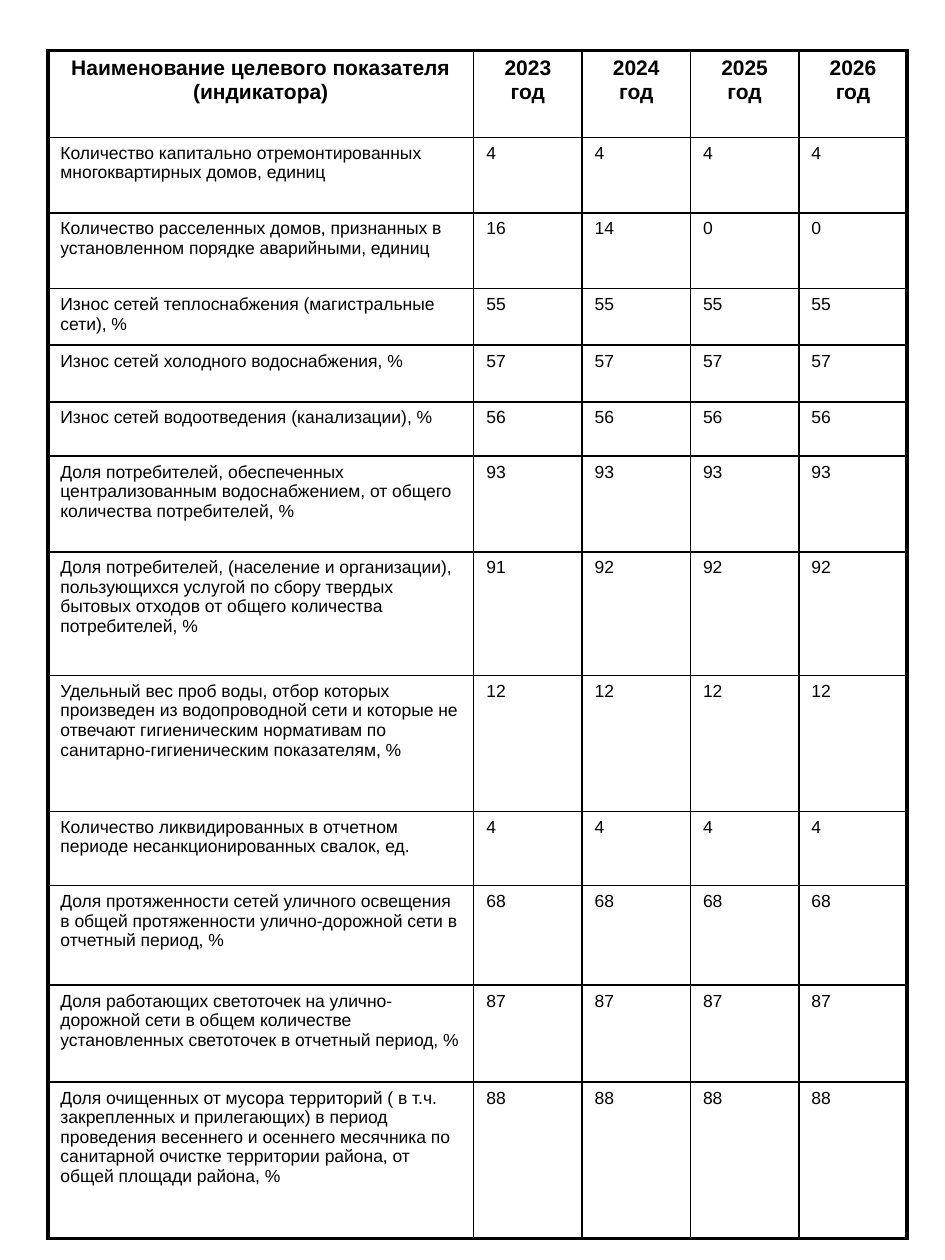
"""Build a one-slide table of municipal target indicators for 2023–2026."""
from lxml.etree import SubElement
from pptx import Presentation
from pptx.dml.color import RGBColor
from pptx.enum.text import PP_ALIGN
from pptx.oxml.ns import qn
from pptx.util import Inches, Pt


def color(value):
    return RGBColor.from_string(value)


def add_border(cell, side, width):
    line = SubElement(cell._tc.get_or_add_tcPr(), qn(f"a:ln{side}"), w=str(Pt(width)))
    fill = SubElement(line, qn("a:solidFill"))
    SubElement(fill, qn("a:srgbClr"), val=BLACK)


BLACK = "000000"
INNER_WIDTH, OUTER_WIDTH = 1, 2.25
HEADER_FORMAT = {"name": "Arial", "size": Pt(12), "bold": True}
BODY_FORMAT = {"name": "Arial", "size": Pt(10), "bold": False}
MARGINS = {
    "margin_left": Inches(0.1),
    "margin_top": Inches(0.05),
    "margin_right": Inches(0.1),
    "margin_bottom": Inches(0.05),
}

header = ["Наименование целевого показателя (индикатора)"]
header += [f"{year} год" for year in range(2023, 2027)]
indicators = [
    (0.6, "Количество капитально отремонтированных многоквартирных домов, единиц", [4, 4, 4, 4]),
    (0.6, "Количество расселенных домов, признанных в установленном порядке аварийными, единиц",
     [16, 14, 0, 0]),
    (0.45, "Износ сетей теплоснабжения (магистральные сети), %", [55, 55, 55, 55]),
    (0.45, "Износ сетей холодного водоснабжения, %", [57, 57, 57, 57]),
    (0.43, "Износ сетей водоотведения (канализации), %", [56, 56, 56, 56]),
    (0.76, "Доля потребителей, обеспеченных централизованным водоснабжением, "
     "от общего количества потребителей, %", [93, 93, 93, 93]),
    (0.98, "Доля потребителей, (население и организации), пользующихся услугой по сбору "
     "твердых бытовых отходов от общего количества потребителей, %", [91, 92, 92, 92]),
    (1.08, "Удельный вес проб воды, отбор которых произведен из водопроводной сети и которые "
     "не отвечают гигиеническим нормативам по санитарно-гигиеническим показателям, %",
     [12, 12, 12, 12]),
    (0.59, "Количество ликвидированных в отчетном периоде несанкционированных свалок, ед.",
     [4, 4, 4, 4]),
    (0.79, "Доля протяженности сетей уличного освещения в общей протяженности "
     "улично-дорожной сети в отчетный период, %", [68, 68, 68, 68]),
    (0.77, "Доля работающих светоточек на улично-дорожной сети в общем количестве "
     "установленных светоточек в отчетный период, %", [87, 87, 87, 87]),
    (1.24, "Доля очищенных от мусора территорий ( в т.ч. закрепленных и прилегающих) в период "
     "проведения весеннего и осеннего месячника по санитарной очистке территории района, "
     "от общей площади района, %", [88, 88, 88, 88]),
]
rows = [(0.69, header)] + [(height, [name, *values]) for height, name, values in indicators]
column_widths = [3.38] + [0.86] * 4
last_row, last_column = len(rows) - 1, len(column_widths) - 1

presentation = Presentation()
presentation.slide_width = Inches(7.5)
presentation.slide_height = Inches(10)
slide = presentation.slides.add_slide(presentation.slide_layouts[6])

table = slide.shapes.add_table(
    len(rows), len(column_widths), Inches(0.38), Inches(0.4), Inches(6.81), Inches(9.44)
).table
table.first_row = False
table.horz_banding = False
for column, width in zip(table.columns, column_widths):
    column.width = Inches(width)

for row_index, (height, texts) in enumerate(rows):
    table.rows[row_index].height = Inches(height)
    is_header = row_index == 0
    for column_index, text in enumerate(texts):
        cell = table.cell(row_index, column_index)
        for name, value in MARGINS.items():
            setattr(cell, name, value)

        outer_sides = {
            "L": column_index == 0,
            "R": column_index == last_column,
            "T": is_header,
            "B": row_index == last_row,
        }
        for side, is_outer in outer_sides.items():
            add_border(cell, side, OUTER_WIDTH if is_outer else INNER_WIDTH)
        cell.fill.background()

        paragraph = cell.text_frame.paragraphs[0]
        paragraph.alignment = PP_ALIGN.CENTER if is_header else PP_ALIGN.LEFT
        run = paragraph.add_run()
        run.text = str(text)
        for name, value in (HEADER_FORMAT if is_header else BODY_FORMAT).items():
            setattr(run.font, name, value)
        run.font.color.rgb = color(BLACK)

presentation.save("out.pptx")
